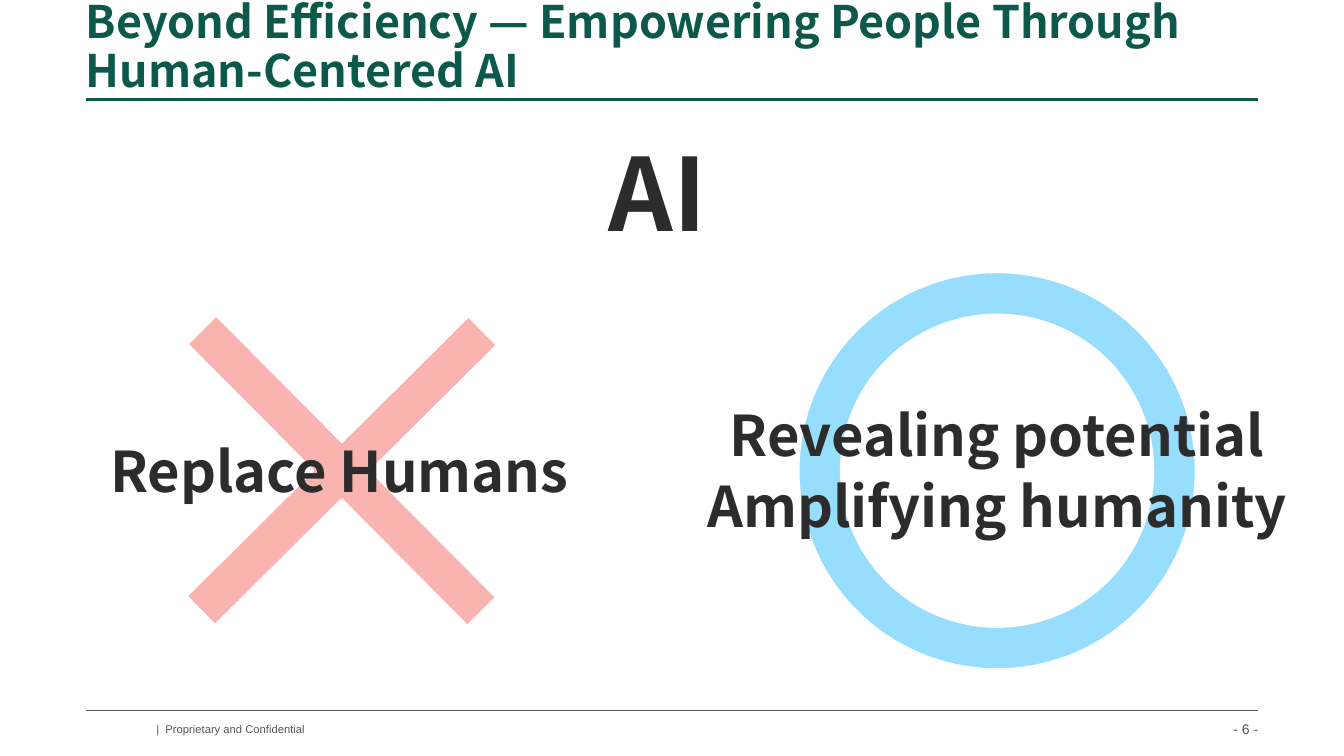
from lxml.etree import SubElement
from pptx import Presentation
from pptx.dml.color import RGBColor
from pptx.enum.shapes import MSO_CONNECTOR as Connector, MSO_SHAPE as Preset
from pptx.enum.text import MSO_ANCHOR as Anchor, MSO_AUTO_SIZE as AutoSize, PP_ALIGN as Align
from pptx.oxml.ns import qn
from pptx.util import Pt

PX = 9144
COLORS = {"green": "0C594C", "ink": "2C2C2C", "gray": "575757", "red": "FAB4AF",
          "blue": "97DEFE", "white": "FFFFFF"}
HEADING = "Noto Sans CJK JP"
BODY = "Arial"
LEFT, RIGHT = 85, 1248
TITLE_RULE, FOOTER_RULE = 99, 705
MARK_SIZE = 394


def color(name):
    """Return a named colour."""
    return RGBColor.from_string(COLORS[name])


def apply(target, **values):
    """Set each given attribute on the target."""
    for name, value in values.items():
        setattr(target, name, value)


def emu(box):
    """Turn a box of px into EMU lengths."""
    return [length * PX for length in box]


def write(shape, lines, font, size, ink, bold=False, inset=(0, 0), anchor=Anchor.TOP,
          wrap=False, gap=0, **paragraph_format):
    """Fill a shape with formatted lines of text."""
    frame = shape.text_frame
    across, down = emu(inset)
    apply(frame, text="\n".join(lines), auto_size=AutoSize.NONE, word_wrap=wrap,
          vertical_anchor=anchor, margin_left=across, margin_right=across,
          margin_top=down, margin_bottom=down)
    for index, paragraph in enumerate(frame.paragraphs):
        apply(paragraph, space_before=Pt(gap if index else 0), **paragraph_format)
        apply(paragraph.font, name=font, size=Pt(size), bold=bold)
        paragraph.font.color.rgb = color(ink)


def add_label(slide, box, lines, size, **paragraph_format):
    """Add a large bold label."""
    write(slide.shapes.add_textbox(*emu(box)), lines, HEADING, size, "ink", bold=True,
          inset=(4, 5), gap=3, **paragraph_format)


def add_rule(slide, y, ink, width):
    """Draw a horizontal rule between the slide margins."""
    rule = slide.shapes.add_connector(Connector.STRAIGHT, *emu((LEFT, y, RIGHT, y)))
    rule.line.color.rgb = color(ink)
    rule.line.width = Pt(width)
    SubElement(rule._element.spPr, qn("a:effectLst"))


def add_mark(slide, box, preset, fill, adjustment, rotation=0):
    """Draw a square verdict mark."""
    mark = slide.shapes.add_shape(preset, *emu(box))
    mark.adjustments[0] = adjustment
    mark.rotation = rotation
    mark.shadow.inherit = False
    mark.fill.solid()
    mark.fill.fore_color.rgb = color(fill)
    mark.line.color.rgb = color("white")
    mark.line.width = Pt(1.5)


def add_header(slide, box):
    """Place the title above its rule."""
    title = slide.shapes.title
    apply(title, **dict(zip(("left", "top", "width", "height"), emu(box))))
    write(title, ["Beyond Efficiency — Empowering People Through Human-Centered AI"],
          HEADING, 32, "green", bold=True, inset=(0, 3), anchor=Anchor.BOTTOM, wrap=True,
          alignment=Align.LEFT, line_spacing=0.9)
    add_rule(slide, TITLE_RULE, "green", 2)


def add_comparison(slide, box):
    """Contrast the rejected and the endorsed role of AI."""
    left, top, width, height = box
    add_label(slide, (left + 515, top, 134, 131), ["AI"], 72)
    mark_top = top + 145
    middle = mark_top + MARK_SIZE // 2
    add_mark(slide, (left + 57, mark_top, MARK_SIZE, MARK_SIZE), Preset.CROSS, "red",
             0.449, 45.2)
    add_mark(slide, (left + 707, mark_top, MARK_SIZE, MARK_SIZE), Preset.DONUT, "blue", 0.107)
    add_label(slide, (left, middle - 39, 503, 77), ["Replace Humans"], 40,
              alignment=Align.CENTER)
    add_label(slide, (left + 583, middle - 75, 642, 149),
              ["Revealing potential", "Amplifying humanity"], 40, alignment=Align.CENTER)


def add_footer(slide, box):
    """Place the footer rule, notice and page number."""
    left, top, width, height = box
    add_rule(slide, top, "gray", 0.5)
    notice = slide.shapes.add_textbox(*emu((left + 70, top + 11, 149, 13)))
    write(notice, ["|  Proprietary and Confidential"], BODY, 8, "gray", line_spacing=1.04)
    number = slide.shapes.add_textbox(*emu((left + width - 35, top + 9, 35, 17)))
    write(number, ["- 6 -"], BODY, 10, "gray", anchor=Anchor.BOTTOM, alignment=Align.RIGHT)


def main():
    """Build and save the slide."""
    presentation = Presentation()
    apply(presentation, slide_width=1333 * PX, slide_height=750 * PX)
    slide = presentation.slides.add_slide(presentation.slide_layouts[5])
    width = RIGHT - LEFT
    add_header(slide, (LEFT, 55, width, TITLE_RULE - 55))
    add_comparison(slide, (LEFT, 125, width, 539))
    add_footer(slide, (LEFT, FOOTER_RULE, width, 45))
    presentation.save("out.pptx")


if __name__ == "__main__":
    main()
